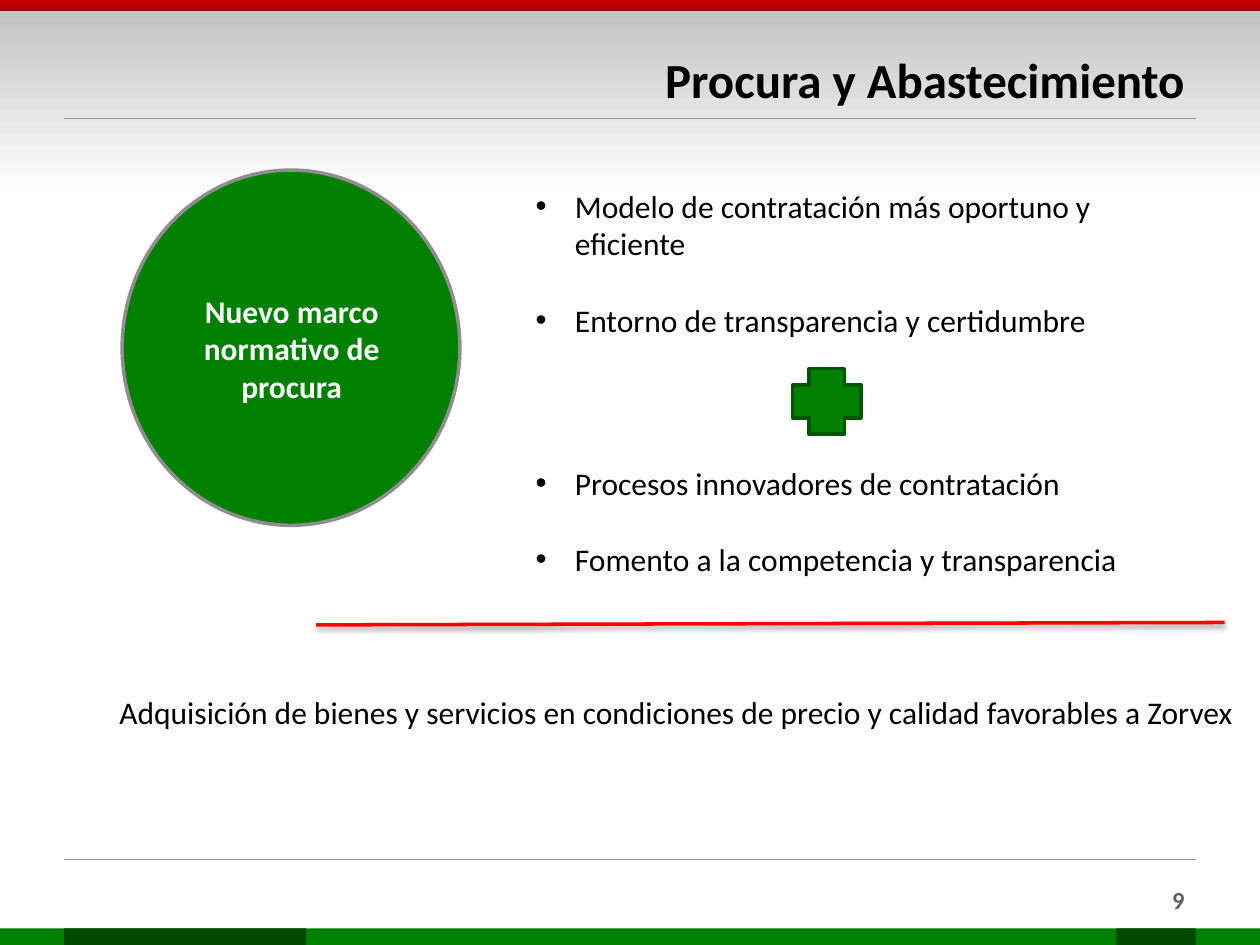
from lxml import etree
from pptx import Presentation
from pptx.dml.color import RGBColor
from pptx.enum.shapes import MSO_CONNECTOR, MSO_SHAPE
from pptx.enum.text import MSO_ANCHOR, MSO_AUTO_SIZE, PP_ALIGN
from pptx.oxml.ns import qn
from pptx.util import Pt

RECTANGLE, OVAL, CROSS = MSO_SHAPE.RECTANGLE, MSO_SHAPE.OVAL, MSO_SHAPE.CROSS
STRAIGHT = MSO_CONNECTOR.STRAIGHT
LEFT, CENTER, RIGHT = PP_ALIGN.LEFT, PP_ALIGN.CENTER, PP_ALIGN.RIGHT
TOP, MIDDLE = MSO_ANCHOR.TOP, MSO_ANCHOR.MIDDLE
NO_AUTOFIT = MSO_AUTO_SIZE.NONE
GREEN, DARK_GREEN, GRAY = "008000", "004800", "969696"
BODY = {"name": "Calibri", "size": Pt(18), "bold": False}
STRONG = {**BODY, "bold": True}
TITLE = {**STRONG, "size": Pt(28)}
NUMBER = {**STRONG, "size": Pt(14)}


def color(value):
    """Return the colour for a hex string."""
    return RGBColor.from_string(value)


def set_values(target, values):
    """Set each attribute of the target from a dict."""
    for name, value in values.items():
        setattr(target, name, value)


def place(box, left, top, width, height):
    """Move and size a box, in points."""
    set_values(box, {"left": Pt(left), "top": Pt(top),
                     "width": Pt(width), "height": Pt(height)})


def add_shape(slide, kind, bounds, fill, outline=None):
    """Add a filled shape; two fill colours make a vertical gradient."""
    shape = slide.shapes.add_shape(kind, *map(Pt, bounds))
    shape.shadow.inherit = False
    if isinstance(fill, tuple):
        shape.fill.gradient()
        shape.fill.gradient_angle = 270
        for stop, value in zip(shape.fill.gradient_stops, fill):
            stop.color.rgb = color(value)
    else:
        shape.fill.solid()
        shape.fill.fore_color.rgb = color(fill)
    if outline:
        shape.line.color.rgb = color(outline)
        shape.line.width = Pt(2)
    else:
        shape.line.fill.background()
    return shape


def add_line(slide, start, end, stroke, width, shadowed=False):
    """Add a straight line, with a soft shadow below it if asked."""
    line = slide.shapes.add_connector(STRAIGHT, *map(Pt, start + end))
    line.line.color.rgb = color(stroke)
    line.line.width = Pt(width)
    effects = etree.SubElement(line.element.spPr, qn("a:effectLst"))
    if shadowed:
        shadow = etree.SubElement(effects, qn("a:outerShdw"), blurRad=str(Pt(3.1)),
                                  dist=str(Pt(1.6)), dir="5400000", rotWithShape="0")
        black = etree.SubElement(shadow, qn("a:srgbClr"), val="000000")
        etree.SubElement(black, qn("a:alpha"), val="38000")


def add_bullet(para):
    """Give a paragraph a hanging round bullet."""
    properties = para._p.get_or_add_pPr()
    properties.set("marL", str(Pt(22.5)))
    properties.set("indent", str(-Pt(22.5)))
    etree.SubElement(properties, qn("a:buFont"), typeface="Arial")
    etree.SubElement(properties, qn("a:buChar"), char="•")


def write(box, lines, font, ink="000000", align=LEFT, anchor=TOP, bulleted=False):
    """Write lines of text as evenly spaced paragraphs of a box."""
    frame = box.text_frame
    set_values(frame, {"word_wrap": True, "auto_size": NO_AUTOFIT,
                       "vertical_anchor": anchor})
    for index, line in enumerate(lines):
        para = frame.paragraphs[0] if index == 0 else frame.add_paragraph()
        set_values(para, {"alignment": align, "space_before": Pt(22 if index else 0)})
        if bulleted:
            add_bullet(para)
        span = para.add_run()
        span.text = line
        set_values(span.font, font)
        span.font.color.rgb = color(ink)


def add_text(slide, bounds, line, font, **options):
    """Add a text box with one line."""
    write(slide.shapes.add_textbox(*map(Pt, bounds)), [line], font, **options)


def fill_placeholder(placeholder, bounds, lines, font, **options):
    """Bring a placeholder to the front, move it and write its text."""
    placeholder.element.getparent().append(placeholder.element)
    place(placeholder, *bounds)
    write(placeholder, lines, font, **options)


def add_frame(slide):
    """Add the header bands, rules, footer bands and slide number."""
    slide.shapes.add_group_shape([
        add_shape(slide, RECTANGLE, (0, 0, 720, 111.6), ("C0C0C0", "FFFFFF")),
        add_shape(slide, RECTANGLE, (0, 0, 720, 5.8), ("CC0000", "A80000")),
    ])
    for height in (67.7, 491):
        add_line(slide, (36.7, height), (683.3, height), GRAY, 0.75)
    for left, width, fill in ((0, 720, GREEN), (36.7, 138.2, DARK_GREEN),
                              (637.9, 45.4, DARK_GREEN)):
        add_shape(slide, RECTANGLE, (left, 530.6, width, 9.4), fill)
    add_text(slide, (516.2, 502.6, 167.8, 23), "9", NUMBER, ink="5F5F5F",
             align=RIGHT, anchor=MIDDLE)


def add_circle(slide):
    """Add the green circle with its label."""
    circle = add_shape(slide, OVAL, (69.8, 97.2, 193, 203), GREEN, "8E8E8E")
    label = add_shape(slide, RECTANGLE, (97.2, 162.7, 139, 72.7), GREEN)
    write(label, ["Nuevo marco normativo de procura"], STRONG, ink="FFFFFF",
          align=CENTER, anchor=MIDDLE)
    slide.shapes.add_group_shape([circle, label])


def main():
    """Build and save the deck."""
    deck = Presentation()
    deck.slide_width, deck.slide_height = Pt(720), Pt(540)
    slide = deck.slides.add_slide(deck.slide_layouts[3])
    title, first_list, second_list = list(slide.placeholders)[:3]
    add_frame(slide)
    add_circle(slide)
    fill_placeholder(title, (352.8, 24.5, 331.2, 41), ["Procura y Abastecimiento"],
                     TITLE, align=RIGHT, anchor=MIDDLE)
    fill_placeholder(first_list, (298.8, 103, 347, 94.3),
                     ["Modelo de contratación más oportuno y eficiente",
                      "Entorno de transparencia y certidumbre"], BODY, bulleted=True)
    fill_placeholder(second_list, (298.8, 261.4, 347, 72.7),
                     ["Procesos innovadores de contratación",
                      "Fomento a la competencia y transparencia"], BODY, bulleted=True)
    add_shape(slide, CROSS, (452.9, 210.6, 39, 37.5), GREEN, "005600")
    add_line(slide, (180.7, 357.1), (699.8, 355.7), "FF0000", 2, shadowed=True)
    add_text(slide, (61.2, 392.4, 693.4, 28.8),
             "Adquisición de bienes y servicios en condiciones de precio y calidad "
             "favorables a Zorvex", BODY)
    deck.save("out.pptx")


if __name__ == "__main__":
    main()
